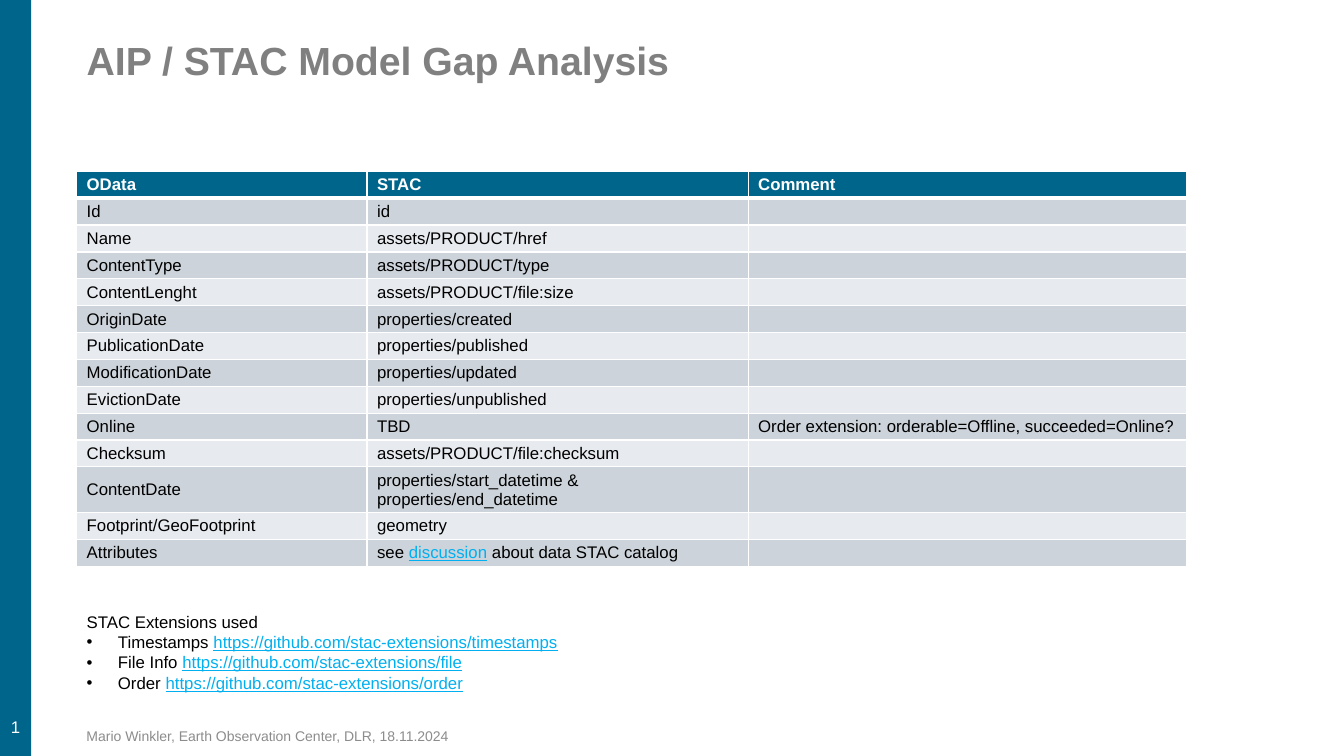
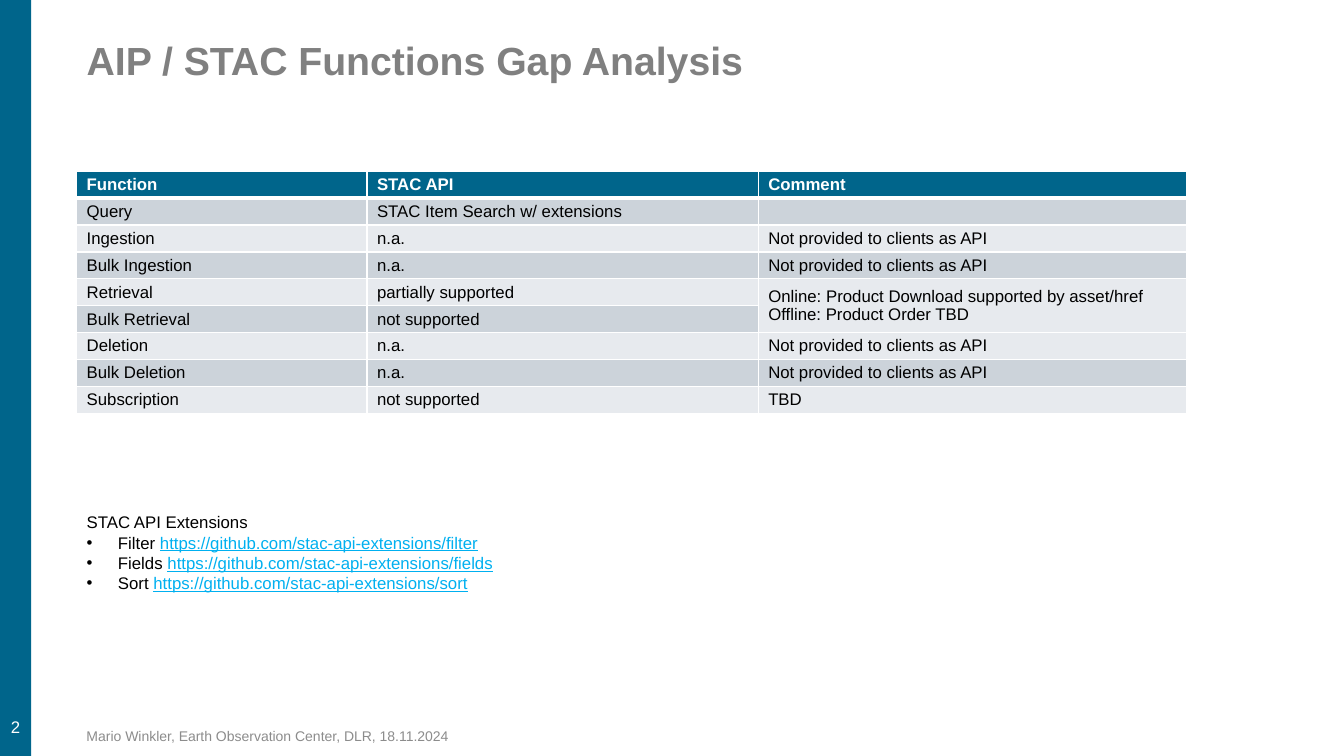
from dataclasses import dataclass

from pptx import Presentation
from pptx.dml.color import RGBColor as Rgb
from pptx.enum.shapes import MSO_SHAPE as Preset
from pptx.enum.text import MSO_ANCHOR as Anchor, MSO_AUTO_SIZE as AutoSize, PP_ALIGN as Align
from pptx.oxml.xmlchemy import OxmlElement
from pptx.util import Inches, Pt


@dataclass(frozen=True)
class Theme:
    font: str = "Arial"
    teal: Rgb = Rgb(0x00, 0x65, 0x8B)
    white: Rgb = Rgb(0xFF, 0xFF, 0xFF)
    black: Rgb = Rgb(0x00, 0x00, 0x00)
    title_grey: Rgb = Rgb(0x80, 0x80, 0x80)
    footer_grey: Rgb = Rgb(0x8C, 0x8C, 0x8C)
    link: Rgb = Rgb(0x00, 0xB0, 0xF0)
    row_dark: Rgb = Rgb(0xCC, 0xD3, 0xDA)
    row_light: Rgb = Rgb(0xE7, 0xEA, 0xEE)
    title_size: int = 28
    text_size: int = 12
    footer_size: int = 10


THEME = Theme()
LEFT = 0.76
BAND_WIDTH = 0.31
INDENT = Inches(0.31)
ROW_HEIGHT = 0.26
FOOTER = "Mario Winkler, Earth Observation Center, DLR, 18.11.2024"
NOT_PROVIDED = "Not provided to clients as API"

# Text between two bars is set in the link style.
SLIDES = [
    {
        "title": "AIP / STAC Model Gap Analysis",
        "columns": [2.88, 3.78, 4.35],
        "rows": [
            ("OData", "STAC", "Comment"),
            ("Id", "id", ""),
            ("Name", "assets/PRODUCT/href", ""),
            ("ContentType", "assets/PRODUCT/type", ""),
            ("ContentLenght", "assets/PRODUCT/file:size", ""),
            ("OriginDate", "properties/created", ""),
            ("PublicationDate", "properties/published", ""),
            ("ModificationDate", "properties/updated", ""),
            ("EvictionDate", "properties/unpublished", ""),
            ("Online", "TBD", "Order extension: orderable=Offline, succeeded=Online?"),
            ("Checksum", "assets/PRODUCT/file:checksum", ""),
            ("ContentDate", "properties/start_datetime & properties/end_datetime", ""),
            ("Footprint/GeoFootprint", "geometry", ""),
            ("Attributes", "see |discussion| about data STAC catalog", ""),
        ],
        "merges": [],
        "list_top": 6.02,
        "list": [
            "STAC Extensions used",
            "Timestamps |https://github.com/stac-extensions/timestamps|",
            "File Info |https://github.com/stac-extensions/file|",
            "Order |https://github.com/stac-extensions/order|",
        ],
    },
    {
        "title": "AIP / STAC Functions Gap Analysis",
        "columns": [2.88, 3.88, 4.25],
        "rows": [
            ("Function", "STAC API", "Comment"),
            ("Query", "STAC Item Search w/ extensions", ""),
            ("Ingestion", "n.a.", NOT_PROVIDED),
            ("Bulk Ingestion", "n.a.", NOT_PROVIDED),
            ("Retrieval", "partially supported",
             "Online: Product Download supported by asset/href\nOffline: Product Order TBD"),
            ("Bulk Retrieval", "not supported", ""),
            ("Deletion", "n.a.", NOT_PROVIDED),
            ("Bulk Deletion", "n.a.", NOT_PROVIDED),
            ("Subscription", "not supported", "TBD"),
        ],
        "merges": [((4, 2), (5, 2))],
        "list_top": 5.03,
        "list": [
            "STAC API Extensions",
            "Filter |https://github.com/stac-api-extensions/filter|",
            "Fields |https://github.com/stac-api-extensions/fields|",
            "Sort |https://github.com/stac-api-extensions/sort|",
        ],
    },
]


def write(paragraph, text, color, size=THEME.text_size, bold=False):
    """Style the paragraph and add its text, with parts between bars as links."""
    font = paragraph.font
    font.name, font.size, font.bold = THEME.font, Pt(size), bold
    font.color.rgb = color
    if not text:
        end = OxmlElement("a:endParaRPr")
        end.set("sz", str(size * 100))
        paragraph._p.append(end)
        return
    for index, part in enumerate(text.split("|")):
        if part:
            run = paragraph.add_run()
            run.text = part
            if index % 2:
                run.font.color.rgb = THEME.link
                run.font.underline = True


def add_border(cell, side, points):
    line = OxmlElement(f"a:ln{side}")
    line.set("w", str(Pt(points)))
    fill = OxmlElement("a:solidFill")
    color = OxmlElement("a:srgbClr")
    color.set("val", str(THEME.white))
    fill.append(color)
    line.append(fill)
    cell._tc.get_or_add_tcPr().append(line)


prs = Presentation()
prs.slide_width, prs.slide_height = Inches(13.33), Inches(7.5)
layout = prs.slide_layouts[1]

for number, content in enumerate(SLIDES, start=1):
    slide = prs.slides.add_slide(layout)
    shapes = slide.shapes

    if number == 1:  # the side band belongs to the layout
        band = shapes.add_shape(Preset.RECTANGLE, 0, 0, Inches(BAND_WIDTH), prs.slide_height)
        band.shadow.inherit = False
        band.fill.solid()
        band.fill.fore_color.rgb = THEME.teal
        band.line.fill.background()
        layout.shapes.element.insert(2, band.element)

    title = shapes.title
    title.left, title.top = Inches(LEFT), Inches(0.36)
    title.width, title.height = Inches(11), Inches(1.08)
    title.text_frame.vertical_anchor = Anchor.TOP
    title.text_frame.auto_size = AutoSize.NONE
    heading = title.text_frame.paragraphs[0]
    heading.alignment = Align.LEFT
    heading.line_spacing = 0.9
    write(heading, content["title"], THEME.title_grey, THEME.title_size, bold=True)

    rows, columns = content["rows"], content["columns"]
    table = shapes.add_table(
        len(rows), len(columns), Inches(LEFT), Inches(1.7),
        Inches(sum(columns)), Inches(ROW_HEIGHT * len(rows)),
    ).table
    table.horz_banding = False
    for column, width in zip(table.columns, columns):
        column.width = Inches(width)
    for r, row in enumerate(rows):
        is_header = r == 0
        for c, text in enumerate(row):
            cell = table.cell(r, c)
            cell.vertical_anchor = Anchor.MIDDLE
            cell.margin_left = cell.margin_right = Inches(0.1)
            cell.margin_top = cell.margin_bottom = Inches(0.04)
            add_border(cell, "L", 1)
            add_border(cell, "R", 1)
            add_border(cell, "T", 3 if r == 1 else 1)
            add_border(cell, "B", 3 if is_header else 1)
            cell.fill.solid()
            band_color = THEME.row_dark if r % 2 else THEME.row_light
            cell.fill.fore_color.rgb = THEME.teal if is_header else band_color
            frame = cell.text_frame
            for i, line in enumerate(text.split("\n")):
                paragraph = frame.add_paragraph() if i else frame.paragraphs[0]
                write(paragraph, line, THEME.white if is_header else THEME.black, bold=is_header)
    for first, last in content["merges"]:
        table.cell(*first).merge(table.cell(*last))

    extensions = slide.placeholders[1]
    extensions.left, extensions.top = Inches(LEFT), Inches(content["list_top"])
    extensions.width, extensions.height = Inches(5.5), Inches(0.91)
    frame = extensions.text_frame
    frame.auto_size = AutoSize.NONE
    for i, item in enumerate(content["list"]):
        paragraph = frame.add_paragraph() if i else frame.paragraphs[0]
        paragraph.space_before = Pt(0)
        properties = paragraph._p.get_or_add_pPr()
        properties.set("marL", str(INDENT if i else 0))
        properties.set("indent", str(-INDENT if i else 0))
        bullet = OxmlElement("a:buChar" if i else "a:buNone")
        if i:
            bullet.set("char", "•")
        properties.append(bullet)
        write(paragraph, item, THEME.black)

    page = shapes.add_textbox(0, Inches(5.84), Inches(BAND_WIDTH), Inches(1.57)).text_frame
    page.word_wrap = True
    page.vertical_anchor = Anchor.BOTTOM
    page.margin_left = page.margin_right = Inches(0.04)
    page.margin_top = page.margin_bottom = Inches(0.1)
    page.paragraphs[0].alignment = Align.CENTER
    write(page.paragraphs[0], str(number), THEME.white)

    footer = shapes.add_textbox(Inches(LEFT), Inches(7.16), Inches(4.5), Inches(0.28)).text_frame
    footer.word_wrap = True
    footer.vertical_anchor = Anchor.MIDDLE
    write(footer.paragraphs[0], FOOTER, THEME.footer_grey, THEME.footer_size)

prs.save("out.pptx")
